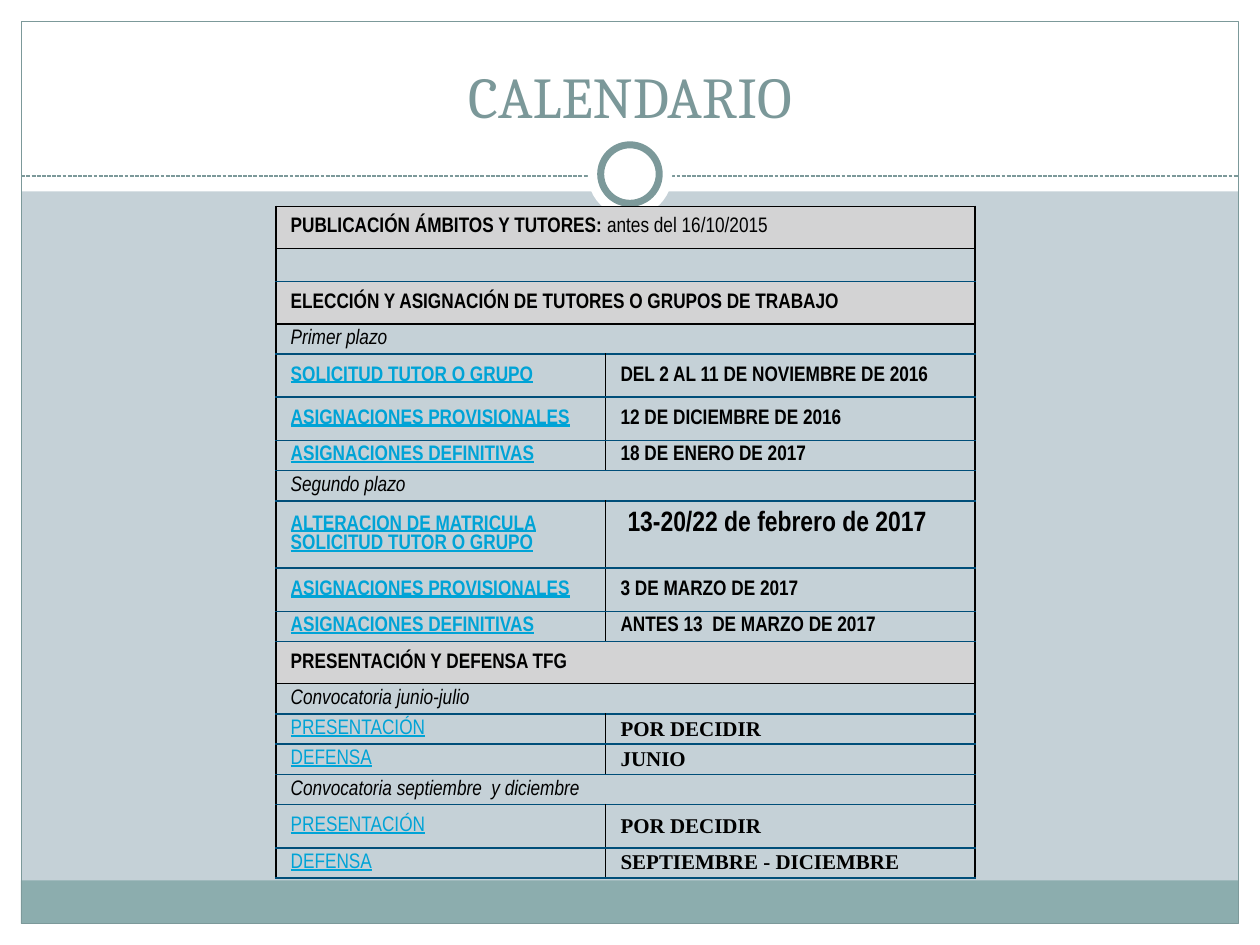
from pptx import Presentation, util as u
from pptx.dml.color import RGBColor
from pptx.enum import dml, shapes, text
from pptx.oxml.ns import qn
from lxml import etree

Cm, Pt = u.Cm, u.Pt
WHITE, TEAL, BLACK, NAVY = "FFFFFF", "7C999A", "000000", "004E79"
LINK, GREY = "00A3D6", "D3D3D4"


def hue(code):
    return RGBColor.from_string(code)


class Deck:
    face = "Arial Narrow"
    size = 12

    def __init__(self, prs):
        self.slide = prs.slides.add_slide(prs.slide_layouts[6])
        self.items = self.slide.shapes

    def ground(self, color):
        fill = self.slide.background.fill
        fill.solid()
        fill.fore_color.rgb = hue(color)

    def shape(self, kind, box, fill=None, line=None, width=0.75):
        item = self.items.add_shape(kind, *map(Cm, box))
        item.shadow.inherit = False
        if fill:
            item.fill.solid()
            item.fill.fore_color.rgb = hue(fill)
        else:
            item.fill.background()
        if line:
            item.line.color.rgb = hue(line)
            item.line.width = Pt(width)
        else:
            item.line.fill.background()

    def dash(self, x, y, end, color):
        item = self.items.add_connector(
            shapes.MSO_CONNECTOR.STRAIGHT, Cm(x), Cm(y), Cm(end), Cm(y))
        item.line.color.rgb = hue(color)
        item.line.width = Pt(0.75)
        item.line.dash_style = dml.MSO_LINE.SQUARE_DOT
        props = item._element.spPr
        etree.SubElement(props, qn("a:effectLst"))

    def font(self, font, color=BLACK, size=None, face=None,
             bold=False, slant=False, under=False):
        font.name, font.size = face or self.face, Pt(size or self.size)
        font.color.rgb = hue(color)
        font.bold, font.italic, font.underline = bold, slant, under

    def title(self, box, words, **style):
        frame = self.items.add_textbox(*map(Cm, box)).text_frame
        frame.word_wrap = True
        frame.vertical_anchor = text.MSO_ANCHOR.BOTTOM
        par = frame.paragraphs[0]
        par.text, par.alignment = words, text.PP_ALIGN.CENTER
        self.font(par.font, **style)

    def edge(self, cell, **sides):
        props = cell._tc.get_or_add_tcPr()
        for spot, side in enumerate(("L", "R", "T", "B")):
            line = etree.Element(qn("a:ln" + side), w=str(Pt(1)))
            fill = etree.SubElement(line, qn("a:solidFill"))
            etree.SubElement(fill, qn("a:srgbClr"), val=sides.get(side, BLACK))
            props.insert(spot, line)

    def cell(self, cell, words, fill=None, pad=0.05, **style):
        if fill:
            cell.fill.solid()
            cell.fill.fore_color.rgb = hue(fill)
        else:
            cell.fill.background()
        cell.margin_left = cell.margin_right = Cm(0.3)
        cell.margin_top = cell.margin_bottom = Cm(pad)
        cell.vertical_anchor = text.MSO_ANCHOR.MIDDLE
        par = cell.text_frame.paragraphs[0]
        self.font(par.font, **style)
        if words:
            par.text = words

    def table(self, x, y, cols, rows):
        high = [row[1] for row in rows]
        grid = self.items.add_table(
            len(rows), len(cols), Cm(x), Cm(y), Cm(sum(cols)), Cm(sum(high))).table
        grid.first_row = grid.horz_banding = False
        for col, wide in zip(grid.columns, cols):
            col.width = Cm(wide)
        # Rules are black at the top and under headings, navy elsewhere
        tops = [BLACK if n < 2 or rows[n - 1][0] == "head" else NAVY
                for n in range(len(rows))] + [NAVY]
        for n, (kind, tall, *words) in enumerate(rows):
            grid.rows[n].height = Cm(tall)
            left, right = grid.cell(n, 0), grid.cell(n, 1)
            if len(words) == 1:
                left.merge(right)
            for cell, word, style in zip((left, right), words, LOOKS[kind]):
                self.cell(cell, word, **style)
            for cell in (left, right):
                self.edge(cell, T=tops[n], B=tops[n + 1])
        return grid


# Cell styles for each kind of row
LOOKS = {
    "head": [dict(fill=GREY, pad=0.17, bold=True)],
    "gap": [dict(pad=0)],
    "term": [dict(slant=True)],
    "date": [dict(color=LINK, bold=True, under=True), dict(bold=True)],
    "exam": [dict(color=LINK, under=True),
             dict(face="Times New Roman", bold=True)],
}
LOW, MID, TALL = 0.54, 0.61, 0.87
PROV, FINAL = "ASIGNACIONES PROVISIONALES", "ASIGNACIONES DEFINITIVAS"
SHOW, DEFEND, OPEN = "PRESENTACIÓN", "DEFENSA", "POR DECIDIR"
ROWS = [
    ("head", 0.78, "PUBLICACIÓN ÁMBITOS Y TUTORES: "),
    ("gap", 0.67, ""),
    ("head", 0.78, "ELECCIÓN Y ASIGNACIÓN DE TUTORES O GRUPOS DE TRABAJO"),
    ("term", LOW, "Primer plazo"),
    ("date", TALL, "SOLICITUD TUTOR O GRUPO", "DEL 2 AL 11 DE NOVIEMBRE DE 2016"),
    ("date", TALL, PROV, "12 DE DICIEMBRE DE 2016"),
    ("date", LOW, FINAL, "18 DE ENERO DE 2017"),
    ("term", LOW, "Segundo plazo"),
    ("date", 1.36, "ALTERACION DE MATRICULA SOLICITUD TUTOR O GRUPO", " "),
    ("date", TALL, PROV, "3 DE MARZO DE 2017"),
    ("date", LOW, FINAL, "ANTES 13  DE MARZO DE 2017"),
    ("head", 0.78, "PRESENTACIÓN Y DEFENSA TFG"),
    ("term", LOW, "Convocatoria junio-julio"),
    ("exam", MID, SHOW, OPEN),
    ("exam", MID, DEFEND, "JUNIO"),
    ("term", LOW, "Convocatoria septiembre  y diciembre"),
    ("exam", TALL, SHOW, OPEN),
    ("exam", MID, DEFEND, "SEPTIEMBRE - DICIEMBRE"),
]


def main():
    prs = Presentation()
    prs.slide_width, prs.slide_height = Cm(25.4), Cm(19.05)
    deck = Deck(prs)
    rect, oval = shapes.MSO_SHAPE.RECTANGLE, shapes.MSO_SHAPE.OVAL

    # Frame: white margins, footer band and outline
    deck.ground("C5D1D7")
    for box in ((0, 18.62, 25.4, 0.43), (0, 0, 25.4, 3.86),
                (0, 0, 0.43, 19.05), (24.97, 0, 0.43, 19.05)):
        deck.shape(rect, box, WHITE)
    deck.shape(rect, (0.42, 17.75, 24.54, 0.87), "8CADAE")
    deck.shape(rect, (0.43, 0.43, 24.54, 18.19), line=TEAL)

    # Divider with ring
    deck.dash(0.43, 3.55, 24.97, TEAL)
    deck.shape(oval, (11.85, 2.67, 1.7, 1.7), WHITE)
    deck.shape(oval, (12.11, 2.92, 1.18, 1.18), WHITE, TEAL, 4)

    # Heading
    deck.title((0.85, 0.64, 23.7, 2.11), "CALENDARIO",
               face="Cambria", size=33, color="7B9899")

    # Calendar
    grid = deck.table(5.56, 4.16, (6.65, 7.44), ROWS)

    # Cells with mixed runs
    run = grid.cell(0, 0).text_frame.paragraphs[0].add_run()
    run.text = "antes del 16/10/2015"
    deck.font(run.font)
    cell = grid.cell(8, 1)
    cell.vertical_anchor = text.MSO_ANCHOR.TOP
    par = cell.text_frame.paragraphs[0]
    deck.font(par.runs[0].font, face="Cambria", size=18, bold=True)
    run = par.add_run()
    run.text = "13-20/22 de febrero de 2017"
    deck.font(run.font, size=16, bold=True)

    prs.save("out.pptx")


if __name__ == "__main__":
    main()
